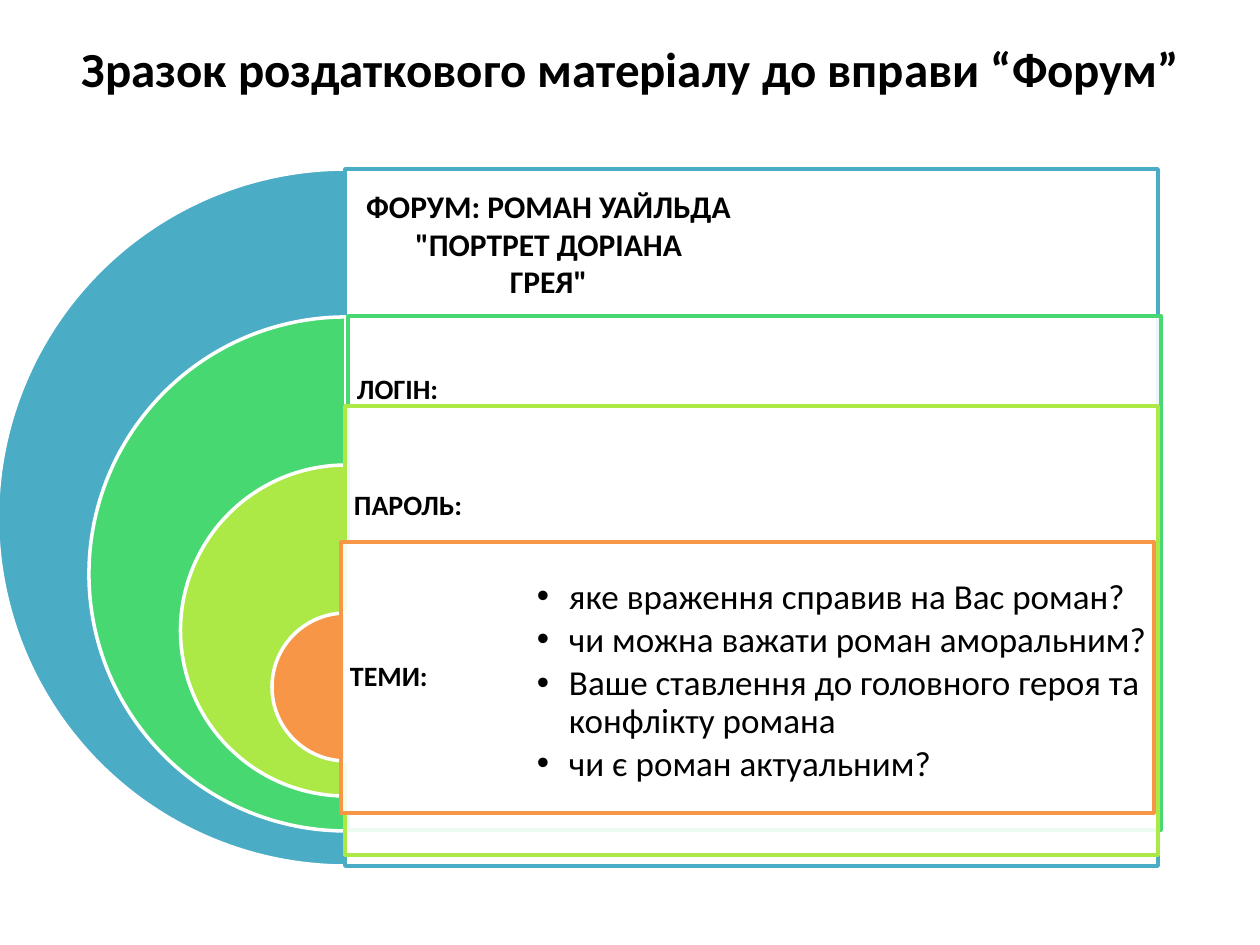
import pptx
import pptx.util
import pptx.dml.color
import pptx.enum.shapes
import pptx.enum.text
import pptx.oxml
import pptx.oxml.ns
from lxml import etree

Pt = pptx.util.Pt
RGBColor = pptx.dml.color.RGBColor
MSO_SHAPE = pptx.enum.shapes.MSO_SHAPE
PP_ALIGN = pptx.enum.text.PP_ALIGN
MSO_ANCHOR = pptx.enum.text.MSO_ANCHOR
qn = pptx.oxml.ns.qn

WHITE = RGBColor(0xFF, 0xFF, 0xFF)
BLACK = RGBColor(0x00, 0x00, 0x00)
BLUE = RGBColor(0x4B, 0xAC, 0xC6)
GREEN = RGBColor(0x47, 0xD8, 0x72)
LIME = RGBColor(0xAC, 0xE9, 0x46)
ORANGE = RGBColor(0xF7, 0x96, 0x46)
FONT = "Calibri"

TITLE = "Зразок роздаткового матеріалу до вправи “Форум”"
# colour, panel (left, top, height), label height, label lines
LEVELS = [
    (BLUE, (345, 169, 697), 149,
     ["ФОРУМ: РОМАН УАЙЛЬДА", "\"ПОРТРЕТ ДОРІАНА", "ГРЕЯ\""]),
    (GREEN, (348, 316, 514), 149, ["ЛОГІН:"]),
    (LIME, (345, 406, 449), 200, ["ПАРОЛЬ:"]),
    (ORANGE, (341, 542, 271), 271, ["ТЕМИ:"]),
]
TOPICS = [
    "яке враження справив на Вас роман?",
    "чи можна важати роман аморальним?",
    "Ваше ставлення до головного героя та конфлікту романа",
    "чи є роман актуальним?",
]

PIE_CENTRE, PIE_TOP, PIE_SIZE = 346, 169, 697
TOP_STEP, SIZE_STEP = 148, 183
PANEL_WIDTH, LABEL_WIDTH = 813, 407
EMU_PER_PX = 914400 / 126


def px(n):
    return pptx.util.Emu(round(n * EMU_PER_PX))


def place(sp, left, top, width, height):
    sp.left, sp.top, sp.width, sp.height = map(px, (left, top, width, height))


def set_frame(tf, inset):
    tf.word_wrap = True
    tf.auto_size = pptx.enum.text.MSO_AUTO_SIZE.NONE
    tf.vertical_anchor = MSO_ANCHOR.MIDDLE
    tf.margin_left = tf.margin_right = tf.margin_top = tf.margin_bottom = px(inset)


def add_run(p, text, size, bold=False):
    r = p.add_run()
    r.text = text
    r.font.name, r.font.size, r.font.bold = FONT, Pt(size), bold
    r.font.color.rgb = BLACK


def add_filled(s, kind, box, fill, line):
    sp = s.shapes.add_shape(kind, *map(px, box))
    sp.shadow.inherit = False
    sp.fill.solid()
    sp.fill.fore_color.rgb = fill
    sp.line.color.rgb = line
    sp.line.width = Pt(2)
    return sp


def add_pie(s, i, color):
    size = PIE_SIZE - i * SIZE_STEP
    box = (PIE_CENTRE - size / 2, PIE_TOP + i * TOP_STEP, size, size)
    sp = add_filled(s, MSO_SHAPE.PIE, box, color, WHITE)
    sp.adjustments[0], sp.adjustments[1] = 54, 162


def add_panel(s, left, top, height, color):
    sp = add_filled(s, MSO_SHAPE.RECTANGLE, (left, top, PANEL_WIDTH, height), WHITE, color)
    fill = sp._element.spPr.find(qn("a:solidFill"))
    etree.SubElement(fill[0], qn("a:alpha"), val="90000")


def add_label(s, left, top, height, lines):
    heading = len(lines) > 1
    tf = s.shapes.add_textbox(*map(px, (left, top, LABEL_WIDTH, height))).text_frame
    set_frame(tf, 6 if heading else 9)
    p = tf.paragraphs[0]
    p.alignment = PP_ALIGN.CENTER if heading else PP_ALIGN.LEFT
    p.line_spacing = 1.0 if heading else 0.9
    for i, line in enumerate(lines):
        if i:
            p.add_line_break()
        add_run(p, line, 18 if heading else 16, bold=True)


def fill_topics(body):
    place(body, 503, 541, 694, 281)
    tf = body.text_frame
    set_frame(tf, 34)
    for i, topic in enumerate(TOPICS):
        p = tf.paragraphs[0] if i == 0 else tf.add_paragraph()
        p.level = 1
        pPr = p._p.get_or_add_pPr()
        pPr.set("marL", str(px(32)))
        pPr.set("indent", str(px(-32)))
        etree.SubElement(pPr, qn("a:buFont"), typeface="Arial")
        etree.SubElement(pPr, qn("a:buChar"), char="•")
        p.alignment = PP_ALIGN.LEFT
        p.line_spacing = 0.9
        p.space_before, p.space_after = Pt(0), Pt(3)
        add_run(p, topic, 20)


def main():
    prs = pptx.Presentation()
    prs.slide_width, prs.slide_height = px(1260), px(945)
    s = prs.slides.add_slide(prs.slide_layouts[1])
    title, body = s.placeholders

    place(title, 63, 38, 1134, 60)
    set_frame(title.text_frame, 0)
    p = title.text_frame.paragraphs[0]
    p.alignment = PP_ALIGN.CENTER
    add_run(p, TITLE, 28, bold=True)

    for i, (color, (left, top, height), label_height, lines) in enumerate(LEVELS):
        add_pie(s, i, color)
        add_panel(s, left, top, height, color)
        add_label(s, left, top, label_height, lines)

    fill_topics(body)
    s.shapes._spTree.append(body._element)  # topics lie in front of the panels
    prs.save("out.pptx")


if __name__ == "__main__":
    main()
